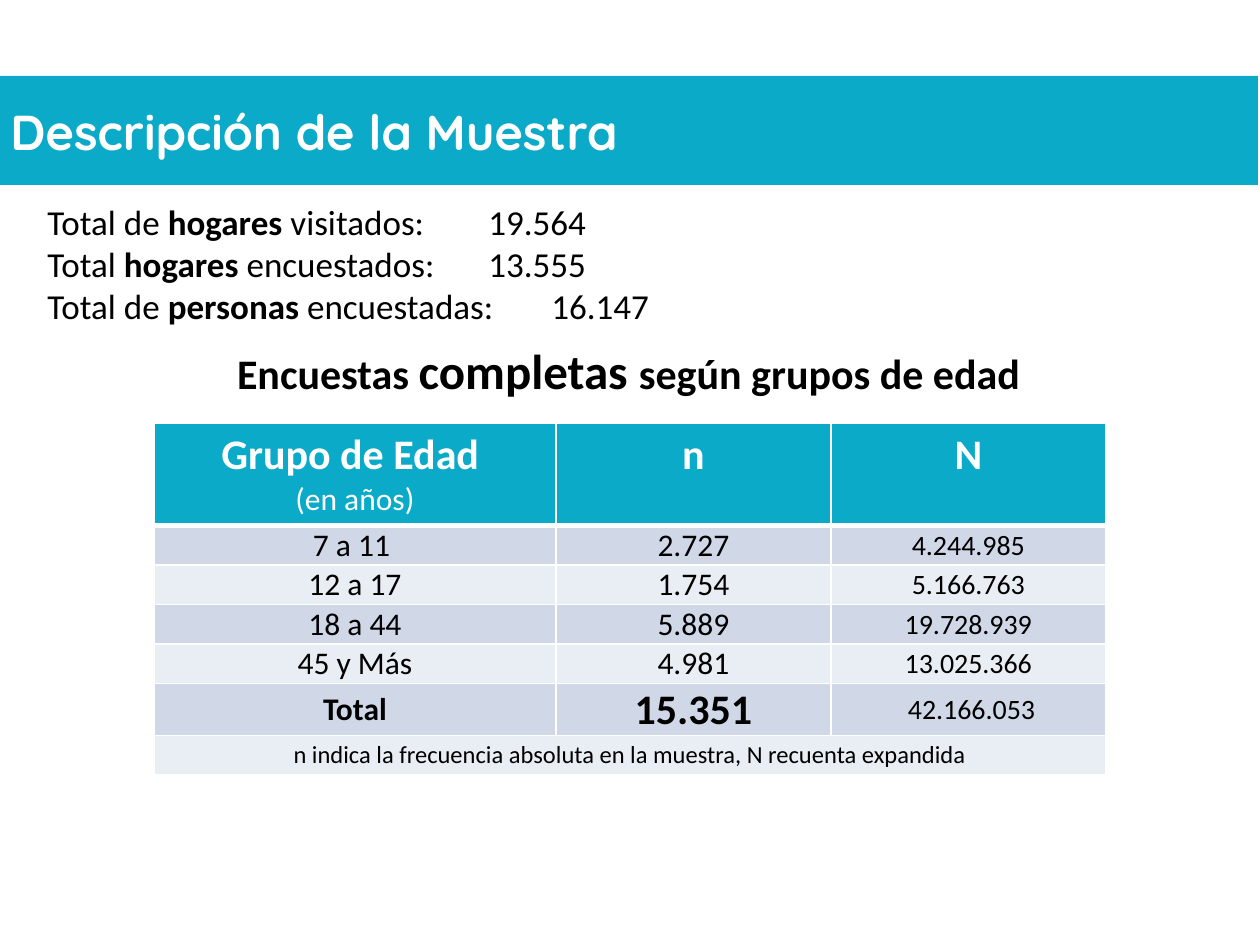
from lxml import etree
from pptx import Presentation
from pptx.dml.color import RGBColor
from pptx.enum.shapes import MSO_SHAPE
from pptx.enum.text import MSO_ANCHOR, PP_ALIGN
from pptx.oxml.ns import qn
from pptx.util import Pt

PX = 914400 // 126
LEFT, CENTER, RIGHT = PP_ALIGN.LEFT, PP_ALIGN.CENTER, PP_ALIGN.RIGHT
MIDDLE = MSO_ANCHOR.MIDDLE
RECTANGLE = MSO_SHAPE.RECTANGLE

TEAL = RGBColor(0x0A, 0xAA, 0xC8)
WHITE = RGBColor(0xFF, 0xFF, 0xFF)
BLACK = RGBColor(0x00, 0x00, 0x00)
BAND_DARK = RGBColor(0xD0, 0xD8, 0xE8)
BAND_LIGHT = RGBColor(0xE9, 0xED, 0xF4)


def write(frame, lines, color, align, font="Calibri"):
    """Fill a text frame; each line is a list of (text, size, bold) spans."""
    for index, line in enumerate(lines):
        para = frame.add_paragraph() if index else frame.paragraphs[0]
        para.alignment = align
        for text, size, bold in line:
            span = para.add_run()
            span.text = text
            span.font.name = font
            span.font.size = Pt(size)
            span.font.bold = bold
            span.font.color.rgb = color


def style_cell(cell, fill, bottom_width):
    """Set the white borders, then the fill that must follow them."""
    properties = cell._tc.get_or_add_tcPr()
    for side, width in (("L", 1), ("R", 1), ("T", 1), ("B", bottom_width)):
        border = etree.SubElement(properties, qn(f"a:ln{side}"), w=str(Pt(width)))
        solid = etree.SubElement(border, qn("a:solidFill"))
        etree.SubElement(solid, qn("a:srgbClr"), val=str(WHITE))
    cell.fill.solid()
    cell.fill.fore_color.rgb = fill


deck = Presentation()
deck.slide_width = 1260 * PX
deck.slide_height = 945 * PX
page = deck.slides.add_slide(deck.slide_layouts[6])

# Sample table
header = [
    [[("Grupo de Edad ", 24, True)], [("(en años)", 18, False)]],
    [[("n", 24, True)]],
    [[("N", 24, True)]],
]
age_groups = [
    ("7 a 11 ", "2.727", "4.244.985"),
    ("12 a 17", "1.754", "5.166.763"),
    ("18 a 44", "5.889", "19.728.939"),
    ("45 y Más", "4.981", "13.025.366"),
]
rows = [header]
for group, count, expanded in age_groups:
    rows.append([[[(group, 18, False)]], [[(count, 18, False)]], [[(expanded, 16, False)]]])
rows.append([[[("Total", 18, True)]], [[("15.351", 24, True)]], [[(" 42.166.053", 16, False)]]])
note = "n indica la frecuencia absoluta en la muestra, N recuenta expandida"
rows.append([[[(note, 14, False)]], [], []])

table = page.shapes.add_table(len(rows), 3, 154 * PX, 423 * PX, 952 * PX, 350 * PX).table
for column, width in zip(table.columns, (402, 275, 275)):
    column.width = width * PX
for row, height in zip(table.rows, (83, 38, 38, 38, 38, 38, 39)):
    row.height = height * PX
table.cell(6, 0).merge(table.cell(6, 2))

for row_index, row in enumerate(rows):
    is_header = row_index == 0
    fill = TEAL if is_header else (BAND_LIGHT, BAND_DARK)[row_index % 2]
    for column_index, lines in enumerate(row):
        cell = table.cell(row_index, column_index)
        style_cell(cell, fill, 3 if is_header else 1)
        if not is_header:
            cell.vertical_anchor = MIDDLE
            cell.margin_left = cell.margin_right = cell.margin_top = PX
            cell.margin_bottom = 0
        write(cell.text_frame, lines, WHITE if is_header else BLACK, CENTER)

# Table heading
heading = page.shapes.add_textbox(74 * PX, 334 * PX, 968 * PX, 72 * PX).text_frame
heading.word_wrap = True
heading_spans = [("Encuestas ", 24, True), ("completas ", 28, True), ("según grupos de edad ", 24, True)]
write(heading, [heading_spans], BLACK, RIGHT)

# Totals
totals = [
    ("Total de ", "hogares", " visitados: \t19.564"),
    ("Total ", "hogares", " encuestados:\t13.555"),
    ("Total de ", "personas", " encuestadas:\t16.147"),
]
summary = page.shapes.add_textbox(35 * PX, 194 * PX, 741 * PX, 140 * PX).text_frame
summary.word_wrap = True
summary_lines = [[(start, 20, False), (unit, 20, True), (rest, 20, False)] for start, unit, rest in totals]
write(summary, summary_lines, BLACK, LEFT)

# Title band
band = page.shapes.add_shape(RECTANGLE, -2 * PX, 76 * PX, 1260 * PX, 109 * PX)
band.shadow.inherit = False
band.fill.solid()
band.fill.fore_color.rgb = TEAL
band.line.fill.background()
band.text_frame.word_wrap = True
band.text_frame.vertical_anchor = MIDDLE
write(band.text_frame, [[("Descripción de la Muestra", 28, True)]], WHITE, LEFT, "Quicksand")

deck.save("out.pptx")
